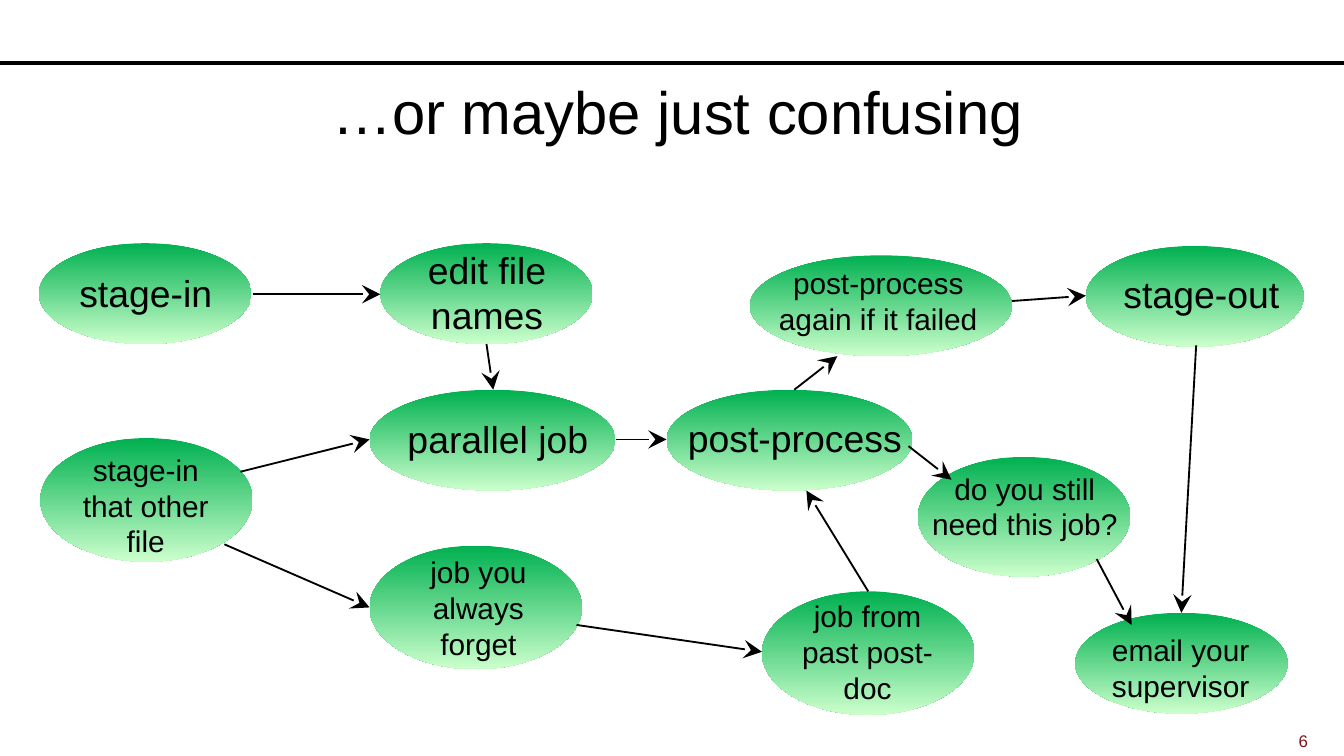
from lxml.etree import SubElement
from pptx import Presentation
from pptx.dml.color import RGBColor
from pptx.enum.shapes import MSO_CONNECTOR as Connector, MSO_SHAPE as Shape
from pptx.enum.text import MSO_ANCHOR as Anchor, MSO_AUTO_SIZE as AutoSize, PP_ALIGN as Align
from pptx.oxml.ns import qn
from pptx.util import Inches, Pt

COLORS = {"ink": "000000", "top": "00B050", "bottom": "CCFFCC", "number": "82151A"}

NODES = [
    ("stage-in", 20, (0.29, 1.81, 1.58, 0.75), (0.42, 1.96, 1.33, 0.44)),
    ("parallel job", 20, (2.75, 2.9, 1.83, 0.75), (2.87, 3.05, 1.67, 0.44)),
    ("post-process again if it failed", 16, (5.58, 1.9, 1.95, 0.75), (5.62, 1.92, 1.83, 0.64)),
    ("stage-out", 20, (8.08, 1.83, 1.62, 0.75), (8.21, 1.97, 1.46, 0.44)),
    ("stage-in that other file", 16, (0.3, 3.26, 1.58, 0.92), (0.42, 3.31, 1.33, 0.91)),
    ("edit file names", 20, (2.83, 1.81, 1.58, 0.75), (2.96, 1.79, 1.33, 0.77)),
    ("job you always forget", 16, (2.75, 4.06, 1.58, 0.92), (2.83, 4.07, 1.46, 0.91)),
    ("job from past post-doc", 16, (5.67, 4.4, 1.58, 0.92), (5.79, 4.4, 1.33, 0.91)),
    ("post-process", 20, (4.96, 2.9, 1.83, 0.75), (5, 3.04, 1.83, 0.44)),
    ("email your supervisor", 16, (8, 4.56, 1.58, 0.75), (8.12, 4.65, 1.33, 0.64)),
    ("do you still need this job?", 16, (6.83, 3.4, 1.58, 0.89), (6.79, 3.45, 1.67, 0.64)),
]

ARROWS = [
    (1.88, 2.19, 2.83, 2.19),
    (1.79, 3.51, 2.75, 3.27),
    (1.67, 4.05, 2.75, 4.52),
    (3.62, 2.56, 3.67, 2.9),
    (6.46, 4.4, 6, 3.65),
    (4.58, 3.27, 4.96, 3.27),
    (4.29, 4.65, 5.67, 4.85),
    (5.91, 2.9, 6.23, 2.65),
    (7.53, 2.24, 8.08, 2.2),
    (8.9, 2.57, 8.79, 4.56),
    (8.16, 4.16, 8.42, 4.65),
    (6.76, 3.32, 7.08, 3.57),
]


def color(name):
    return RGBColor.from_string(COLORS[name])


def inches(values):
    return [Inches(value) for value in values]


def write_text(box, text, *, size, ink="ink", align=Align.CENTER, anchor=Anchor.TOP,
               auto_size=AutoSize.NONE):
    frame = box.text_frame
    frame.word_wrap = True
    frame.auto_size = auto_size
    frame.vertical_anchor = anchor
    para = frame.paragraphs[0]
    para.alignment = align
    span = para.add_run()
    span.text = text
    span.font.name = "Arial"
    span.font.size = Pt(size)
    span.font.color.rgb = color(ink)


def add_title(slide, text, place):
    title = slide.shapes.title
    title.left, title.top, title.width, title.height = inches(place)
    write_text(title, text, size=32, anchor=Anchor.MIDDLE)


def add_text(slide, text, place, **style):
    write_text(slide.shapes.add_textbox(*inches(place)), text, **style)


def add_node(slide, text, size, oval_place, label_place):
    oval = slide.shapes.add_shape(Shape.OVAL, *inches(oval_place))
    oval.shadow.inherit = False
    oval.line.fill.background()
    oval.fill.gradient()
    oval.fill.gradient_angle = 270
    for stop, name, position in zip(oval.fill.gradient_stops, ("top", "bottom"), (0, 1)):
        stop.color.rgb = color(name)
        stop.position = position
    add_text(slide, text, label_place, size=size, auto_size=AutoSize.SHAPE_TO_FIT_TEXT)


def add_line(slide, ends, width):
    line = slide.shapes.add_connector(Connector.STRAIGHT, *inches(ends))
    line.line.color.rgb = color("ink")
    line.line.width = Pt(width)
    SubElement(line._element.spPr, qn("a:effectLst"))
    return line


def add_arrow(slide, ends):
    arrow = add_line(slide, ends, 1)
    outline = arrow._element.spPr.find(qn("a:ln"))
    SubElement(outline, qn("a:tailEnd"), type="stealth", w="lg", len="lg")


def main():
    deck = Presentation()
    deck.slide_width = Inches(10)
    deck.slide_height = Inches(10 * 9 / 16)
    page = deck.slides.add_slide(deck.slide_layouts[5])
    add_line(page, (0, 0.47, 10, 0.47), 2)
    add_title(page, "…or maybe just confusing", (0.17, 0.5, 9.75, 0.65))
    add_text(page, "6", (8.75, 5.39, 1.08, 0.19), size=9, ink="number", align=Align.RIGHT)
    for node in NODES:
        add_node(page, *node)
    for ends in ARROWS:
        add_arrow(page, ends)
    deck.save("out.pptx")


if __name__ == "__main__":
    main()
